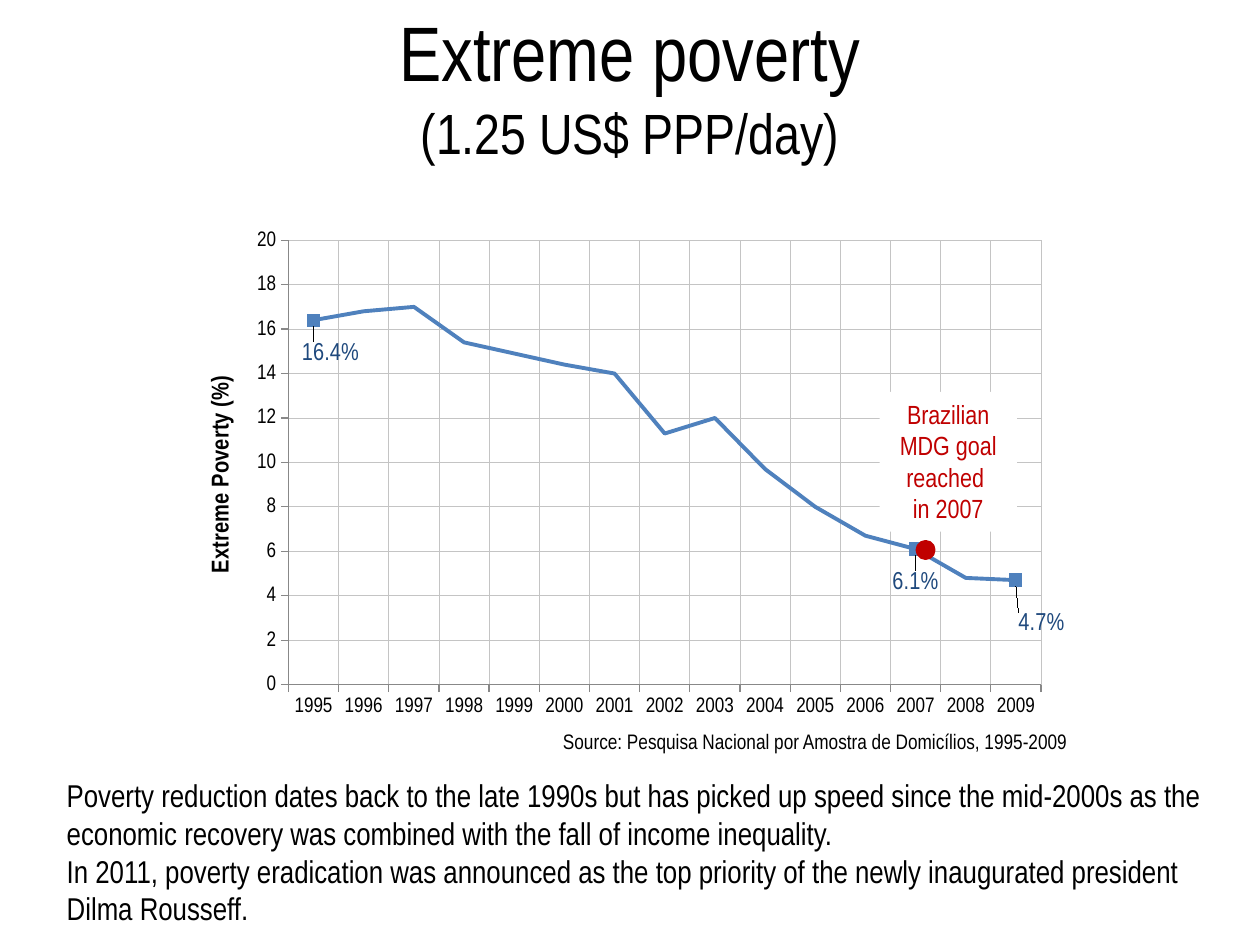
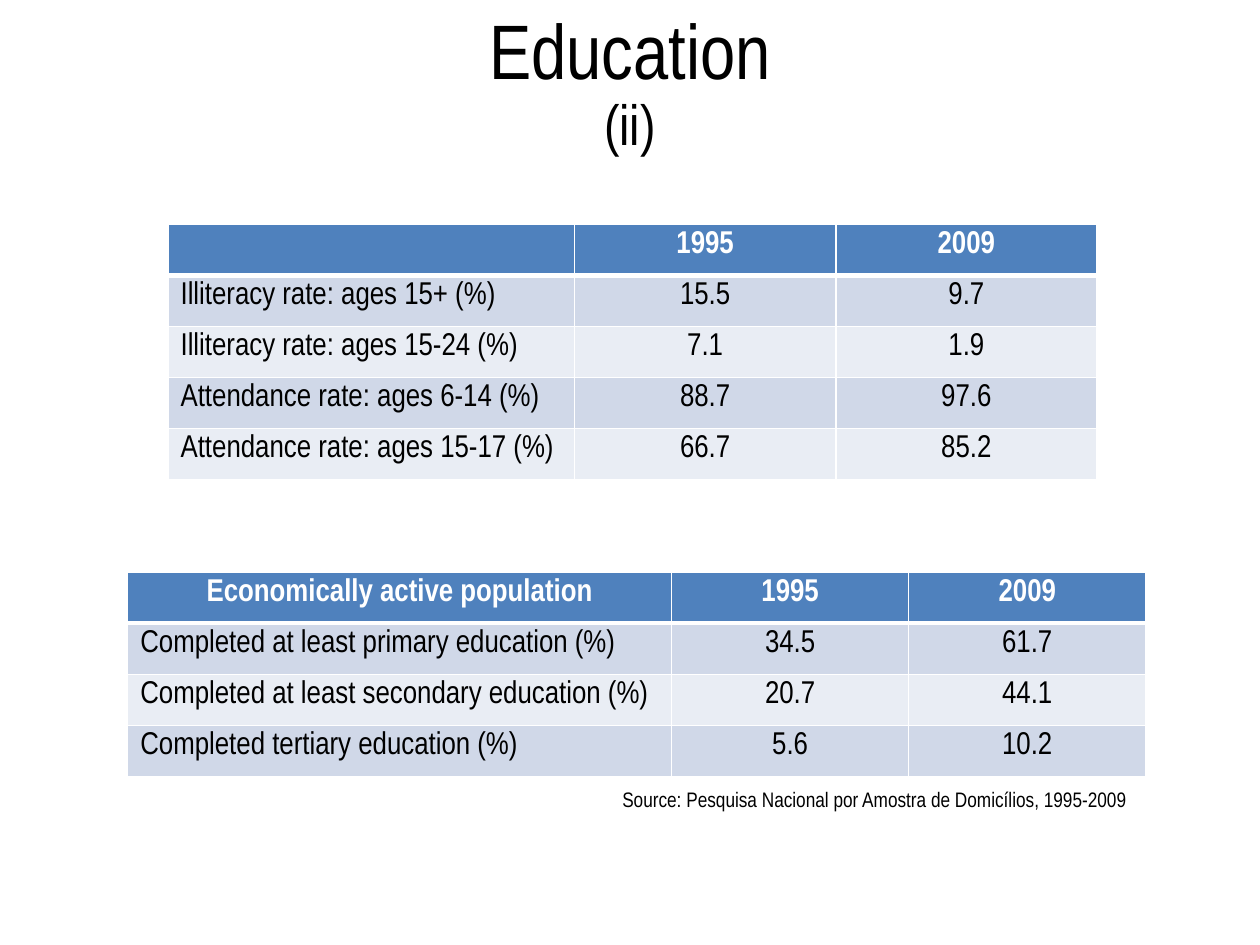
from lxml.etree import SubElement
from pptx import Presentation
from pptx.chart.data import CategoryChartData
from pptx.dml.color import RGBColor
from pptx.enum.chart import XL_CHART_TYPE, XL_LABEL_POSITION, XL_MARKER_STYLE, XL_TICK_MARK
from pptx.enum.shapes import MSO_SHAPE
from pptx.enum.text import MSO_ANCHOR, PP_ALIGN
from pptx.oxml import parse_xml
from pptx.oxml.ns import nsdecls, qn
from pptx.util import Pt

FACE = "Arial Narrow"
HEX = {"text": "000000", "white": "FFFFFF", "blue": "4F81BD", "navy": "1F497D",
       "red": "C00000", "odd": "D0D8E8", "even": "E9EDF4", "axis": "888888",
       "grid": "C4C4C4"}
RGB = {name: RGBColor.from_string(code) for name, code in HEX.items()}
SOURCE = "Source: Pesquisa Nacional por Amostra de Domicílios, 1995-2009"


def write(slide, box, lines, size, color="text", align=PP_ALIGN.LEFT, wrap=True):
    """Add a text box with one paragraph per line and return it."""
    shape = slide.shapes.add_textbox(*map(Pt, box))
    frame = shape.text_frame
    frame.word_wrap = wrap
    frame.text = "\n".join(lines)
    for para in frame.paragraphs:
        para.alignment = align
        para.font.name, para.font.size = FACE, Pt(size)
        para.font.color.rgb = RGB[color]
    return shape


def layout(**parts):
    """Return a manual chart layout with the given parts, in order."""
    node = parse_xml(f"<c:layout {nsdecls('c')}><c:manualLayout/></c:layout>")
    for tag, val in parts.items():
        SubElement(node[0], qn(f"c:{tag}")).set("val", str(val))
    return node


deck = Presentation()
deck.slide_width, deck.slide_height = Pt(720), Pt(540)

# Titles and source lines
pages = []
for head, sub, space, left, top in [
    ("Extreme poverty", "(1.25 US$ PPP/day)", 1.0, 314.6, 412.6),
    ("Education", "(ii)", 0.9, 348.5, 445.7),
]:
    page = deck.slides.add_slide(deck.slide_layouts[6])
    title = write(page, (36, 3.6, 648, 90), [""], 44.1, align=PP_ALIGN.CENTER)
    title.text_frame.vertical_anchor = MSO_ANCHOR.MIDDLE
    para = title.text_frame.paragraphs[0]
    para.line_spacing = space
    para.add_run().text = head
    para.add_line_break()
    small = para.add_run()
    small.text = sub
    small.font.size = Pt(32.4)
    write(page, (left, top, 312, 21.6), [SOURCE], 12, wrap=False)
    pages.append(page)
poverty, school = pages

# Poverty chart
data = CategoryChartData()
data.categories = [str(year) for year in range(1995, 2010)]
data.add_series("Series 1", [16.4, 16.8, 17, 15.4, 14.9, 14.4, 14, 11.3, 12,
                             9.7, 8, 6.7, 6.1, 4.8, 4.7])
chart = poverty.shapes.add_chart(XL_CHART_TYPE.LINE, Pt(116), Pt(128.2),
                                 Pt(492.5), Pt(302.4), data).chart
chart.has_legend = chart.has_title = False
chart.font.name, chart.font.size = FACE, Pt(12)
chart.font.color.rgb = RGB["text"]
for axis in (chart.category_axis, chart.value_axis):
    axis.major_tick_mark = XL_TICK_MARK.OUTSIDE
    axis.format.line.color.rgb = RGB["axis"]
    axis.has_major_gridlines = True
    rule = axis.major_gridlines.format.line
    rule.color.rgb, rule.width = RGB["grid"], Pt(0.5)
scale = chart.value_axis
scale.minimum_scale, scale.maximum_scale, scale.major_unit = 0, 20, 2
scale.tick_labels.number_format = "0"
scale.tick_labels.number_format_is_linked = False
scale.axis_title.text_frame.text = "Extreme Poverty (%)"
font = scale.axis_title.text_frame.paragraphs[0].font
font.name, font.size, font.bold = FACE, Pt(14), True

area = chart.plots[0]._element.getparent()
for old in area.findall(qn("c:layout")):
    area.remove(old)
area.insert(0, layout(layoutTarget="inner", xMode="edge", yMode="edge",
                      x=0.1, y=0.03, w=0.88, h=0.84))

plot = chart.plots[0]
plot.vary_by_categories = False
curve = plot.series[0]
curve.smooth = False
curve.marker.style = XL_MARKER_STYLE.NONE
curve.format.line.color.rgb, curve.format.line.width = RGB["blue"], Pt(2.25)

# Labelled points, each with the shift of its label
marks = [(0, "16.4%", 0.02, 0.02), (12, "6.1%", 0, 0.02), (14, "4.7%", 0.03, 0.04)]
curve.data_labels.show_value = False
for index, words, _, _ in marks:
    point = curve.points[index]
    point.marker.style, point.marker.size = XL_MARKER_STYLE.SQUARE, 7
    point.marker.format.fill.solid()
    point.marker.format.fill.fore_color.rgb = RGB["white"]
    point.marker.format.line.color.rgb = RGB["white"]
    point.format.line.color.rgb, point.format.line.width = RGB["blue"], Pt(2.25)
    label = point.data_label
    label.text_frame.text = words
    font = label.text_frame.paragraphs[0].runs[0].font
    font.name, font.size, font.color.rgb = FACE, Pt(14), RGB["navy"]
    label.position = XL_LABEL_POSITION.BELOW
labels = curve.data_labels._element
for label, (_, _, right, down) in zip(labels.findall(qn("c:dLbl")), marks):
    label.insert(1, layout(x=right, y=down))
labels.append(parse_xml(
    f'<c:extLst {nsdecls("c")}><c:ext uri="{{CE6537A1-D6FC-4f65-9D91-7224C49458BB}}" '
    'xmlns:c15="http://schemas.microsoft.com/office/drawing/2012/chart">'
    '<c15:showLeaderLines val="1"/></c:ext></c:extLst>'))

# Goal marker, callout and comment
dot = poverty.shapes.add_shape(MSO_SHAPE.OVAL, Pt(524.2), Pt(309.6), Pt(9.4), Pt(9.4))
dot.shadow.inherit = False
dot.fill.solid()
dot.fill.fore_color.rgb = dot.line.color.rgb = RGB["red"]
dot.line.width = Pt(2)
goal = write(poverty, (502.6, 223.9, 78.5, 79.9),
             ["Brazilian MDG goal", "reached ", "in 2007"], 15, "red", PP_ALIGN.CENTER)
goal.fill.solid()
goal.fill.fore_color.rgb = RGB["white"]
write(poverty, (31, 439.9, 663.1, 94.3), [
    "Poverty reduction dates back to the late 1990s but has picked up speed since "
    "the mid-2000s as the economic recovery was combined with the fall of income inequality.",
    "In 2011, poverty eradication was announced as the top priority of the newly "
    "inaugurated president Dilma Rousseff."], 18)

# Education tables
rates = [("", "1995", "2009"),
         ("Illiteracy rate: ages 15+ (%)", "15.5", "9.7"),
         ("Illiteracy rate: ages 15-24 (%)", "7.1", "1.9"),
         ("Attendance rate: ages 6-14 (%)", "88.7", "97.6"),
         ("Attendance rate: ages 15-17 (%)", "66.7", "85.2")]
levels = [("Economically active population", "1995", "2009"),
          ("Completed at least primary education (%)", "34.5", "61.7"),
          ("Completed at least secondary education (%)", "20.7", "44.1"),
          ("Completed tertiary education (%)", "5.6", "10.2")]
high = 29.2
for rows, left, top, wide, thin in [(rates, 96, 128.2, 232.3, 149.3),
                                    (levels, 73, 326.9, 310.8, 135.5)]:
    table = school.shapes.add_table(len(rows), 3, Pt(left), Pt(top), Pt(wide + 2 * thin),
                                    Pt(high * len(rows))).table
    for col, width in zip(table.columns, (wide, thin, thin)):
        col.width = Pt(width)
    for r, row in enumerate(rows):
        table.rows[r].height = Pt(high)
        for c, words in enumerate(row):
            cell = table.cell(r, c)
            cell.text = words
            para = cell.text_frame.paragraphs[0]
            para.alignment = PP_ALIGN.CENTER if c or r == 0 else PP_ALIGN.LEFT
            para.font.name, para.font.size, para.font.bold = FACE, Pt(18), r == 0
            para.font.color.rgb = RGB["white" if r == 0 else "text"]
            props = cell._tc.get_or_add_tcPr()
            for side in "LRTB":
                thick = 3 if (r, side) in ((0, "B"), (1, "T")) else 1
                props.append(parse_xml(
                    f'<a:ln{side} {nsdecls("a")} w="{Pt(thick)}"><a:solidFill>'
                    f'<a:srgbClr val="{HEX["white"]}"/></a:solidFill></a:ln{side}>'))
            cell.fill.solid()
            cell.fill.fore_color.rgb = RGB["blue" if r == 0 else "odd" if r % 2 else "even"]

deck.save("out.pptx")
